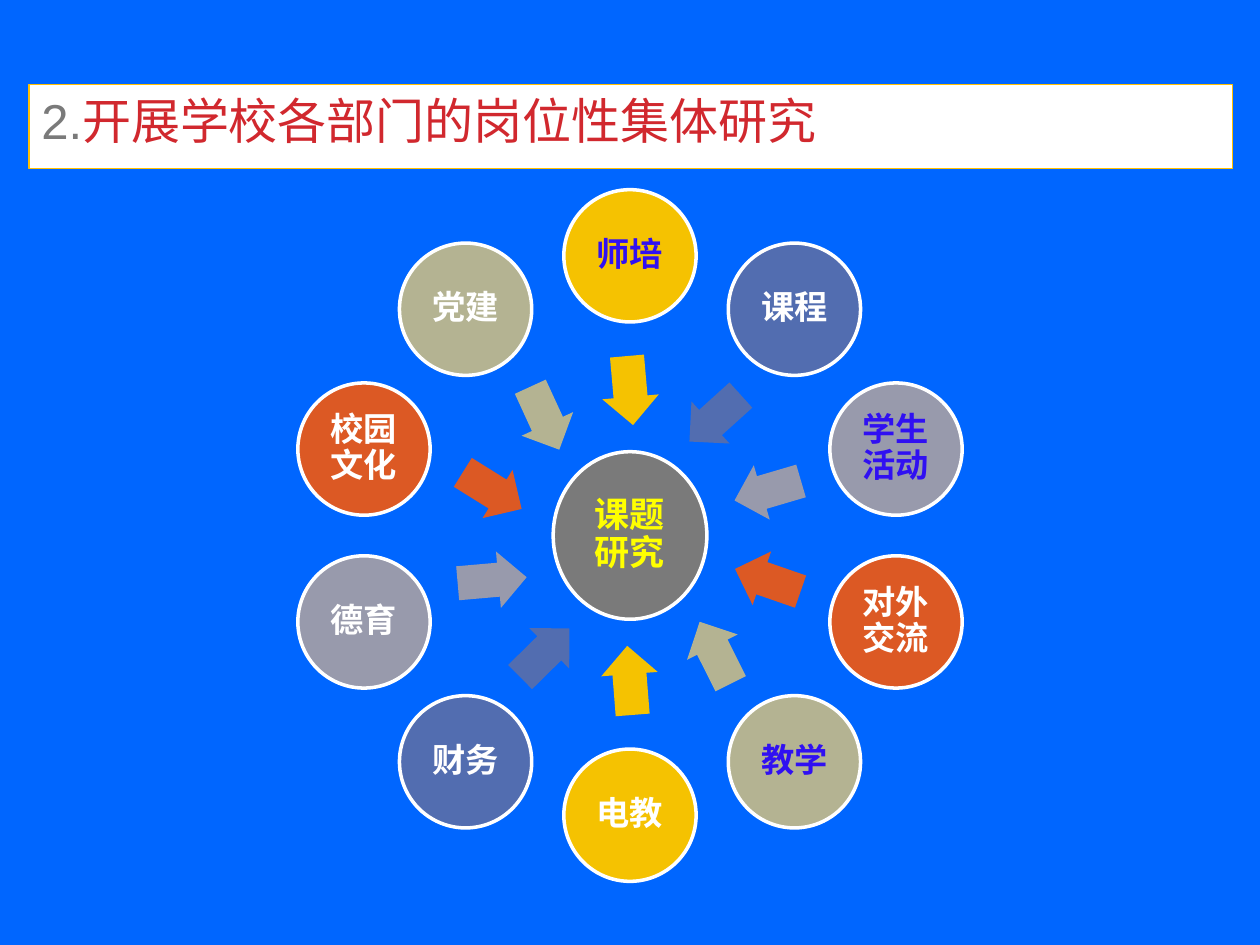
import math
from dataclasses import dataclass

from pptx import Presentation
from pptx import util as u
from pptx.dml.color import RGBColor
from pptx.enum import shapes, text

WHITE, VIOLET, YELLOW, GREY, RED = "FFFFFF", "3010F2", "FFFF00", "7A7A7A", "D1282E"
PALETTE = ["F5C201", "526DB0", "989AAC", "DC5924", "B4B392"]
CENTER_X, CENTER_Y = 5.0, 4.25
CIRCLE_ORBIT, ARROW_ORBIT = 2.22, 1.15


@dataclass
class Department:
    name: str
    arrow_angle: float
    text_color: str = WHITE


DEPARTMENTS = [
    Department("师培", 85, VIOLET),
    Department("课程", 137.9),
    Department("学生活动", 163.6, VIOLET),
    Department("对外交流", 199.1),
    Department("教学", 243.4, VIOLET),
    Department("电教", 265.5),
    Department("财务", 315.4),
    Department("德育", 355),
    Department("校园文化", 31.9),
    Department("党建", 65.3),
]


def color(hex_value: str) -> RGBColor:
    return RGBColor.from_string(hex_value)


def style_run(run, size: float, hex_value: str, bold: bool = False) -> None:
    run.font.name = "Arial"
    run.font.size = u.Pt(size)
    run.font.bold = bold
    run.font.color.rgb = color(hex_value)


def add_centered(parent, kind, x: float, y: float, width: float, height: float, fill: str):
    shape = parent.shapes.add_shape(
        kind, u.Inches(x - width / 2), u.Inches(y - height / 2), u.Inches(width), u.Inches(height)
    )
    shape.shadow.inherit = False
    shape.fill.solid()
    shape.fill.fore_color.rgb = color(fill)
    return shape


def add_circle(parent, label: str, x: float, y: float, width: float, height: float,
               fill: str, size: float, text_color: str) -> None:
    circle = add_centered(parent, shapes.MSO_SHAPE.OVAL, x, y, width, height, fill)
    circle.line.color.rgb = color(WHITE)
    circle.line.width = u.Pt(2)
    frame = circle.text_frame
    frame.text = label
    frame.word_wrap = True
    frame.vertical_anchor = text.MSO_ANCHOR.MIDDLE
    frame.margin_left = frame.margin_right = u.Inches(0.03)
    frame.margin_top = frame.margin_bottom = u.Inches(0.03)
    paragraph = frame.paragraphs[0]
    paragraph.alignment = text.PP_ALIGN.CENTER
    paragraph.line_spacing = 0.9
    style_run(paragraph.runs[0], size, text_color, bold=True)


def add_arrow(parent, x: float, y: float, angle: float, fill: str) -> None:
    arrow = add_centered(parent, shapes.MSO_SHAPE.RIGHT_ARROW, x, y, 0.55, 0.45, fill)
    arrow.adjustments[0] = 0.6
    arrow.adjustments[1] = 0.5
    arrow.rotation = angle
    arrow.line.fill.background()


def add_title(slide) -> None:
    title = slide.shapes.add_textbox(u.Inches(0.23), u.Inches(0.67), u.Inches(9.55), u.Inches(0.67))
    title.fill.solid()
    title.fill.fore_color.rgb = color(WHITE)
    title.line.color.rgb = color("FFC000")
    title.line.width = u.Pt(0.75)
    frame = title.text_frame
    frame.word_wrap = True
    paragraph = frame.paragraphs[0]
    for wording, hex_value in [("2.", GREY), ("开展学校各部门的岗位性集体研究", RED)]:
        run = paragraph.add_run()
        run.text = wording
        style_run(run, 28, hex_value)


def add_diagram(slide) -> None:
    wheel = slide.shapes.add_group_shape()
    add_circle(wheel, "课题研究", CENTER_X, CENTER_Y, 1.22, 1.33, GREY, 20, YELLOW)
    for index, department in enumerate(DEPARTMENTS):
        turn = 2 * math.pi * index / len(DEPARTMENTS)
        dx, dy = math.sin(turn), -math.cos(turn)
        fill = PALETTE[index % len(PALETTE)]
        add_arrow(wheel, CENTER_X + ARROW_ORBIT * dx, CENTER_Y + ARROW_ORBIT * dy,
                  department.arrow_angle, fill)
        add_circle(wheel, department.name, CENTER_X + CIRCLE_ORBIT * dx, CENTER_Y + CIRCLE_ORBIT * dy,
                   1.05, 1.05, fill, 19, department.text_color)


def main() -> None:
    deck = Presentation()
    deck.slide_width, deck.slide_height = u.Inches(10), u.Inches(7.5)
    slide = deck.slides.add_slide(deck.slide_layouts[6])
    slide.background.fill.solid()
    slide.background.fill.fore_color.rgb = color("0066FF")
    add_title(slide)
    add_diagram(slide)
    deck.save("out.pptx")


if __name__ == "__main__":
    main()
